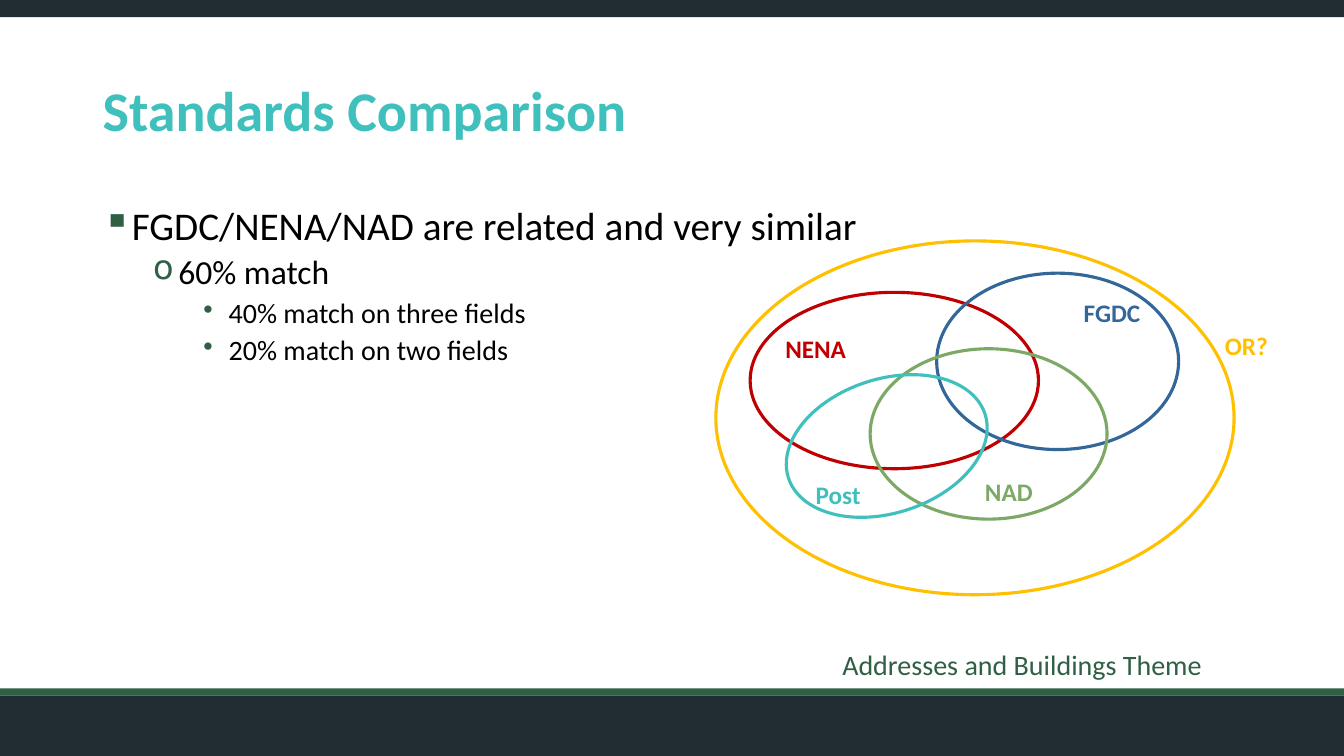
from lxml import etree
from pptx import Presentation, util as u
from pptx.dml.color import RGBColor
from pptx.enum import shapes, text
from pptx.oxml.ns import qn

PX = 9144  # EMU per px, 100 px to the inch
DARK = RGBColor(0x21, 0x2D, 0x32)
GREEN = RGBColor(0x2F, 0x60, 0x44)
TEAL = RGBColor(0x40, 0xC0, 0xBD)
BLACK = RGBColor(0, 0, 0)
RED = RGBColor(0xC0, 0, 0)
BLUE = RGBColor(0x33, 0x66, 0x99)
LEAF = RGBColor(0x7C, 0xA9, 0x65)
GOLD = RGBColor(0xFF, 0xC0, 0)


def px(*vals):
    return [u.Emu(v * PX) for v in vals]


def add_text(slide, box):
    frame = slide.shapes.add_textbox(*px(*box)).text_frame
    frame.word_wrap = True
    return frame


def style(para, size, color, bold=False):
    font = para.font
    font.name, font.size, font.bold = "Calibri", u.Pt(size), bold
    font.color.rgb = color


def add_shape(slide, kind, box):
    shape = slide.shapes.add_shape(kind, *px(*box))
    shape.shadow.inherit = False
    return shape


def add_bullet(para, mark, left):
    props = para._p.get_or_add_pPr()
    props.set("marL", str(left * PX))
    props.set("indent", str(-25 * PX))
    color = etree.SubElement(props, qn("a:buClr"))
    etree.SubElement(color, qn("a:srgbClr"), val=str(GREEN))
    etree.SubElement(props, qn("a:buChar"), char=mark)


def draw_frame(slide, wide, high):
    # Bars at the top and bottom edges
    for top, tall, color in ((high - 60, 60, DARK), (0, 17, DARK),
                             (high - 67, 7, GREEN)):
        bar = add_shape(slide, shapes.MSO_SHAPE.RECTANGLE, (0, top, wide, tall))
        bar.fill.solid()
        bar.fill.fore_color.rgb = color
        bar.line.fill.background()

    # Theme name above the bottom bar
    para = add_text(slide, (379, high - 113, 823, 51)).paragraphs[0]
    para.text = "Addresses and Buildings Theme"
    para.alignment = text.PP_ALIGN.RIGHT
    style(para, 20, GREEN)


def draw_title(slide, box):
    frame = add_text(slide, box)
    frame.vertical_anchor = text.MSO_ANCHOR.MIDDLE
    para = frame.paragraphs[0]
    para.text = "Standards Comparison"
    para.line_spacing = 0.9
    style(para, 40, TEAL, True)


def draw_body(slide, box):
    items = ((0, "FGDC/NENA/NAD are related and very similar"),
             (1, "60% match"),
             (2, "40% match on three fields"),
             (2, "20% match on two fields"))
    frame = add_text(slide, box)
    for num, (level, words) in enumerate(items):
        para = frame.add_paragraph() if num else frame.paragraphs[0]
        para.text = words
        para.level = level
        para.line_spacing = 0.9
        if num:
            para.space_before = u.Pt(5)
        add_bullet(para, "▪o•"[level], 25 + 50 * level)
        style(para, 28 - 4 * level, BLACK)


def draw_venn(slide, box):
    left, top, wide, high = box
    # Name, colour, ellipse box, turn, label corner
    sets = (("NENA", RED, (34, 51, 286, 175), 0, (59, 87)),
            ("FGDC", BLUE, (219, 32, 240, 175), 0, (355, 51)),
            ("NAD", LEAF, (153, 107, 235, 169), 0, (257, 229)),
            ("Post", TEAL, (67, 137, 205, 133), 342, (89, 232)),
            ("OR?", GOLD, (0, 0, wide, high), 0, (495, 84)))
    for name, color, (x, y, w, h), turn, (dx, dy) in sets:
        oval = add_shape(slide, shapes.MSO_SHAPE.OVAL, (left + x, top + y, w, h))
        oval.rotation = turn
        oval.fill.background()
        oval.line.color.rgb = color
        oval.line.width = u.Pt(2.25)
        para = add_text(slide, (left + dx, top + dy, 82, 40)).paragraphs[0]
        para.text = name
        style(para, 18, color, True)


def main():
    deck = Presentation()
    deck.slide_width, deck.slide_height = px(1333, 750)
    slide = deck.slides.add_slide(deck.slide_layouts[6])
    draw_frame(slide, 1333, 750)
    draw_title(slide, (92, 40, 1150, 145))
    draw_body(slide, (92, 200, 1203, 427))
    draw_venn(slide, (710, 239, 514, 351))
    deck.save("out.pptx")


if __name__ == "__main__":
    main()
